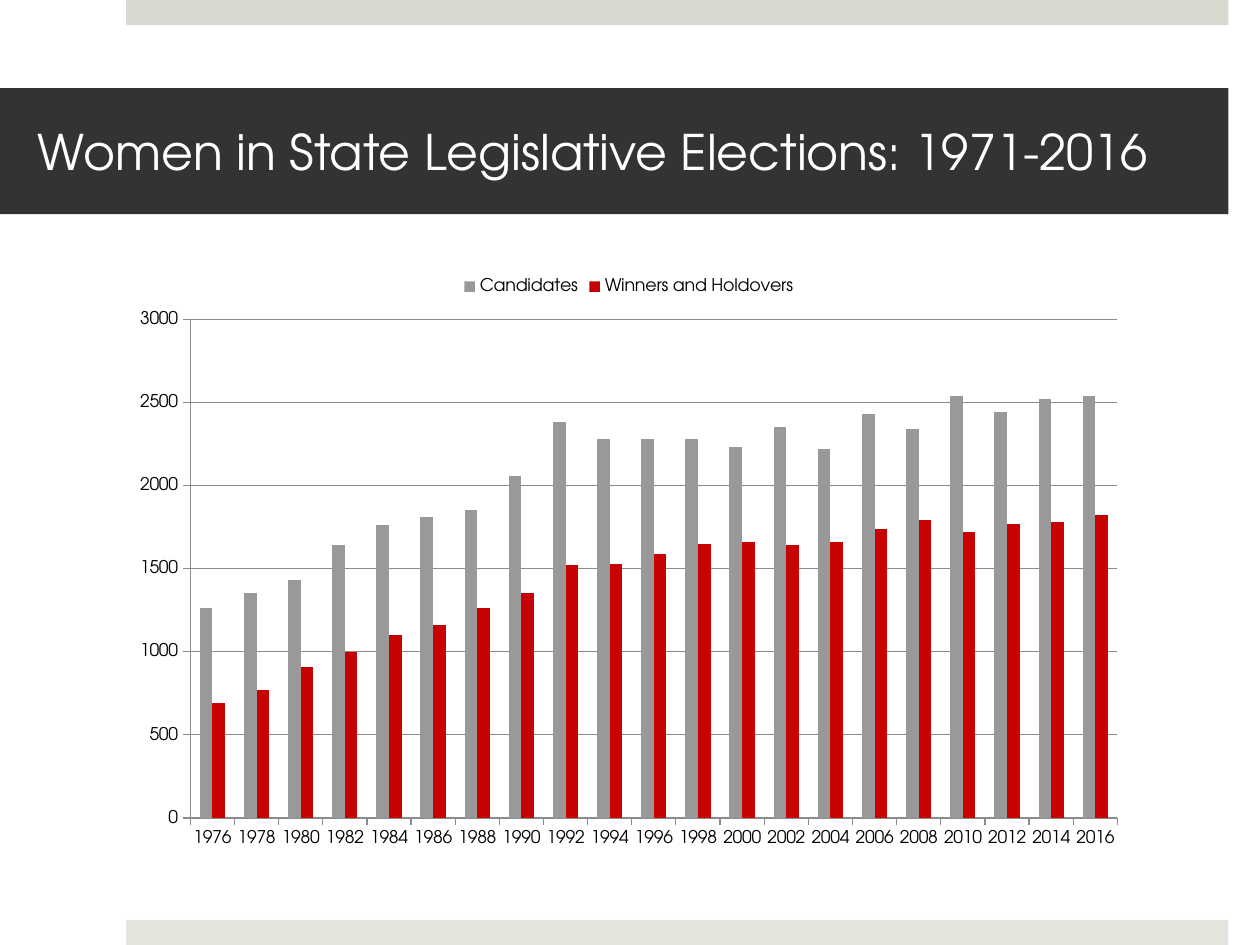
from dataclasses import dataclass

from pptx import Presentation
from pptx.chart.axis import _BaseAxis
from pptx.chart.data import CategoryChartData
from pptx.dml.color import RGBColor
from pptx.dml.line import LineFormat
from pptx.enum.chart import XL_CHART_TYPE, XL_LEGEND_POSITION, XL_TICK_MARK
from pptx.enum.shapes import MSO_SHAPE
from pptx.enum.text import MSO_ANCHOR, MSO_AUTO_SIZE, PP_ALIGN
from pptx.slide import Slide
from pptx.util import Inches, Pt

FONT = "TeX Gyre Adventor"
WHITE = RGBColor(0xFF, 0xFF, 0xFF)
BLACK = RGBColor(0x00, 0x00, 0x00)
CHARCOAL = RGBColor(0x33, 0x33, 0x33)
SAGE = RGBColor(0xD6, 0xD9, 0xCD)
PALE_SAGE = RGBColor(0xE4, 0xE6, 0xDE)
GRAY = RGBColor(0x99, 0x99, 0x99)
RED = RGBColor(0xC7, 0x02, 0x02)
AXIS_GRAY = RGBColor(0x8B, 0x8B, 0x8B)


@dataclass(frozen=True)
class Band:
    top: float
    color: RGBColor


@dataclass(frozen=True)
class Tally:
    name: str
    color: RGBColor
    counts: tuple[int, ...]


BANDS = (Band(0, SAGE), Band(7.3, PALE_SAGE))
ELECTION_YEARS = [str(year) for year in range(1976, 2017, 2)]
TALLIES = (
    Tally("Candidates", GRAY, (
        1260, 1350, 1430, 1640, 1760, 1810, 1850, 2060, 2380, 2280, 2280,
        2280, 2230, 2350, 2220, 2430, 2340, 2540, 2440, 2520, 2540)),
    Tally("Winners and Holdovers", RED, (
        690, 770, 910, 1000, 1100, 1160, 1260, 1350, 1520, 1530, 1590,
        1650, 1660, 1640, 1660, 1740, 1790, 1720, 1770, 1780, 1820)),
)


def draw_band(slide: Slide, band: Band) -> None:
    strip = slide.shapes.add_shape(
        MSO_SHAPE.RECTANGLE, Inches(1), Inches(band.top), Inches(8.75), Inches(0.2))
    strip.shadow.inherit = False
    strip.fill.solid()
    strip.fill.fore_color.rgb = band.color
    strip.line.fill.background()


def draw_title(slide: Slide, wording: str) -> None:
    title = slide.shapes.title
    title.left, title.top = Inches(0), Inches(0.7)
    title.width, title.height = Inches(9.75), Inches(1)
    title.fill.solid()
    title.fill.fore_color.rgb = CHARCOAL
    frame = title.text_frame
    frame.text = wording
    frame.word_wrap = True
    frame.auto_size = MSO_AUTO_SIZE.NONE
    frame.vertical_anchor = MSO_ANCHOR.MIDDLE
    frame.margin_left = frame.margin_right = Inches(0.3)
    frame.margin_top = frame.margin_bottom = Inches(0.05)
    paragraph = frame.paragraphs[0]
    paragraph.alignment = PP_ALIGN.LEFT
    font = paragraph.runs[0].font
    font.name, font.size = FONT, Pt(28)
    font.color.rgb = WHITE


def style_line(line: LineFormat) -> None:
    line.color.rgb = AXIS_GRAY
    line.width = Pt(0.75)


def style_axis(axis: _BaseAxis) -> None:
    axis.major_tick_mark = XL_TICK_MARK.OUTSIDE
    axis.minor_tick_mark = XL_TICK_MARK.NONE
    style_line(axis.format.line)


def draw_chart(slide: Slide, tallies: tuple[Tally, ...]) -> None:
    election_data = CategoryChartData()
    election_data.categories = ELECTION_YEARS
    for tally in tallies:
        election_data.add_series(tally.name, tally.counts)
    chart = slide.shapes.add_chart(
        XL_CHART_TYPE.COLUMN_CLUSTERED, Inches(0.95), Inches(2.1),
        Inches(8.08), Inches(4.71), election_data).chart
    chart.has_title = False
    chart.font.name, chart.font.size = FONT, Pt(10)
    chart.font.color.rgb = BLACK
    chart.has_legend = True
    chart.legend.position = XL_LEGEND_POSITION.TOP
    chart.legend.include_in_layout = False

    style_axis(chart.category_axis)
    counts_axis = chart.value_axis
    style_axis(counts_axis)
    counts_axis.minimum_scale, counts_axis.maximum_scale = 0, 3000
    counts_axis.major_unit = 500
    counts_axis.has_major_gridlines = True
    style_line(counts_axis.major_gridlines.format.line)

    plot = chart.plots[0]
    plot.gap_width, plot.overlap = 150, 0
    plot.vary_by_categories = False
    for columns, tally in zip(plot.series, tallies):
        columns.format.fill.solid()
        columns.format.fill.fore_color.rgb = tally.color
        columns.invert_if_negative = False


def main() -> None:
    presentation = Presentation()
    presentation.slide_width, presentation.slide_height = Inches(10), Inches(7.5)
    slide = presentation.slides.add_slide(presentation.slide_layouts[5])
    for band in BANDS:
        draw_band(slide, band)
    draw_title(slide, "Women in State Legislative Elections: 1971-2016")
    draw_chart(slide, TALLIES)
    presentation.save("out.pptx")


if __name__ == "__main__":
    main()
